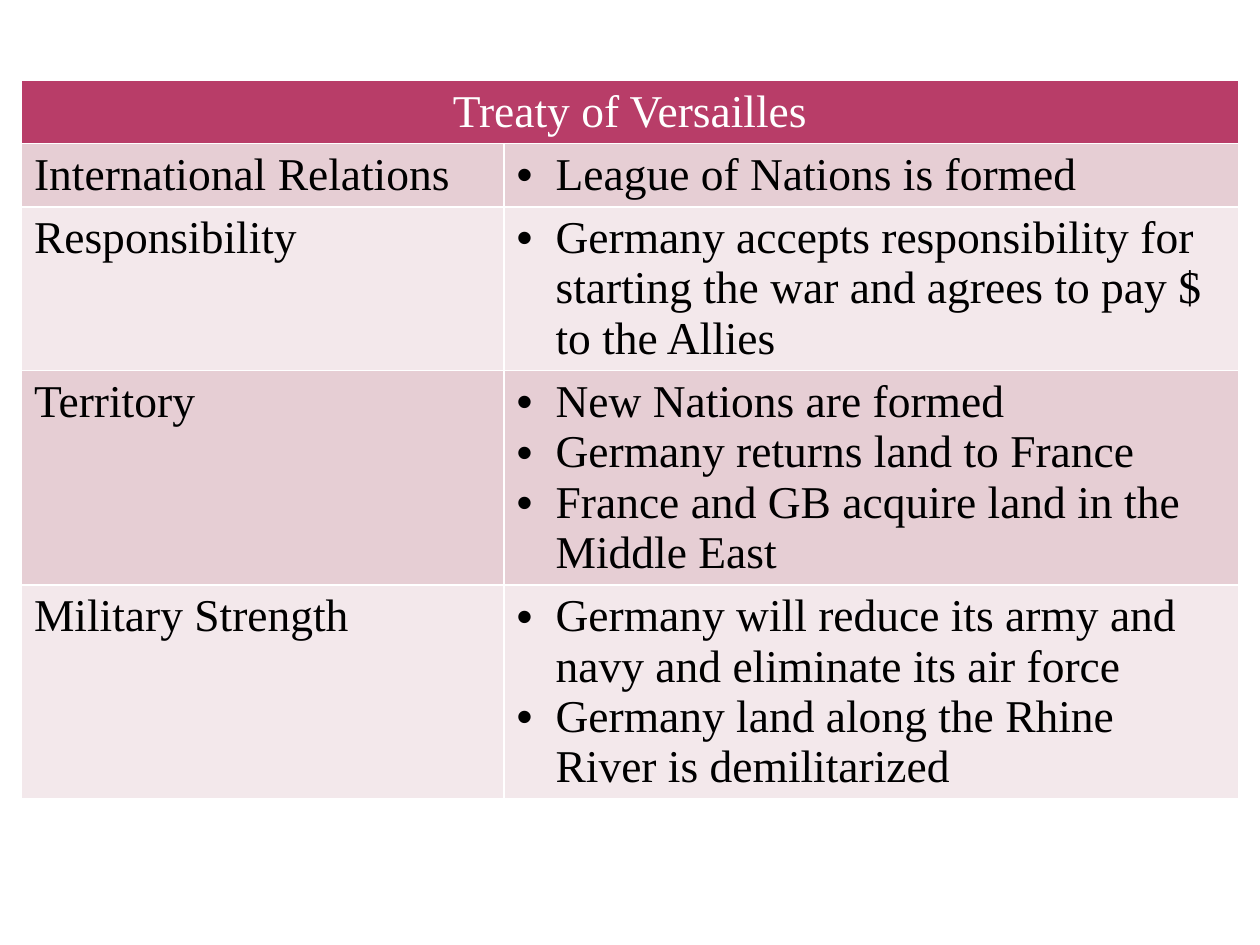
from lxml.etree import SubElement
from pptx import Presentation
from pptx.dml.color import RGBColor
from pptx.enum.text import PP_ALIGN
from pptx.oxml.ns import qn
from pptx.util import Inches, Pt

FONT = "Times New Roman"
HEADER_FILL = "B83D68"
BAND_FILLS = ["E6CED4", "F3E8EB"]
TITLE = "Treaty of Versailles"
TERMS = [
    ("International Relations", ["League of Nations is formed"]),
    ("Responsibility", [
        "Germany accepts responsibility for starting the war and agrees to pay $ to the Allies",
    ]),
    ("Territory", [
        "New Nations are formed",
        "Germany returns land to France",
        "France and GB acquire land in the Middle East",
    ]),
    ("Military Strength", [
        "Germany will reduce its army and navy and eliminate its air force",
        "Germany land along the Rhine River is demilitarized",
    ]),
]


def color(value):
    return RGBColor.from_string(value)


def add_borders(cell):
    properties = cell._tc.get_or_add_tcPr()
    for side in ("a:lnL", "a:lnR", "a:lnT", "a:lnB"):
        line = SubElement(properties, qn(side), w=str(Pt(1)))
        fill = SubElement(line, qn("a:solidFill"))
        SubElement(fill, qn("a:srgbClr"), val="FFFFFF")


def style_cell(cell, fill):
    add_borders(cell)
    cell.fill.solid()
    cell.fill.fore_color.rgb = color(fill)


def add_bullet(paragraph):
    properties = paragraph._p.get_or_add_pPr()
    indent = Inches(0.31)
    properties.set("marL", str(indent))
    properties.set("indent", str(-indent))
    SubElement(properties, qn("a:buFont"), typeface="Arial")
    SubElement(properties, qn("a:buChar"), char="•")


def write_cell(cell, lines, text_color="000000", bulleted=False, alignment=PP_ALIGN.LEFT):
    frame = cell.text_frame
    for index, line in enumerate(lines):
        paragraph = frame.add_paragraph() if index else frame.paragraphs[0]
        paragraph.alignment = alignment
        if bulleted:
            add_bullet(paragraph)
        run = paragraph.add_run()
        run.text = line
        run.font.name = FONT
        run.font.size = Pt(26)
        run.font.bold = False
        run.font.color.rgb = color(text_color)


def add_treaty_table(slide, left, top, width, height):
    row_count = len(TERMS) + 1
    table = slide.shapes.add_table(row_count, 2, left, top, width, height).table
    table.columns[0].width = Inches(3.83)
    table.columns[1].width = width - Inches(3.83)

    for cell in table.rows[0].cells:
        style_cell(cell, HEADER_FILL)
    header = table.cell(0, 0)
    header.merge(table.cell(0, 1))
    write_cell(header, [TITLE], "FFFFFF", alignment=PP_ALIGN.CENTER)

    for row, (topic, points) in enumerate(TERMS, start=1):
        for cell in table.rows[row].cells:
            style_cell(cell, BAND_FILLS[(row - 1) % 2])
        write_cell(table.cell(row, 0), [topic])
        write_cell(table.cell(row, 1), points, bulleted=True)


def main():
    presentation = Presentation()
    presentation.slide_width = Inches(10)
    presentation.slide_height = Inches(7.5)
    slide = presentation.slides.add_slide(presentation.slide_layouts[6])
    add_treaty_table(slide, Inches(0.17), Inches(0.64), Inches(9.66), Inches(2.05))
    presentation.save("out.pptx")


if __name__ == "__main__":
    main()
